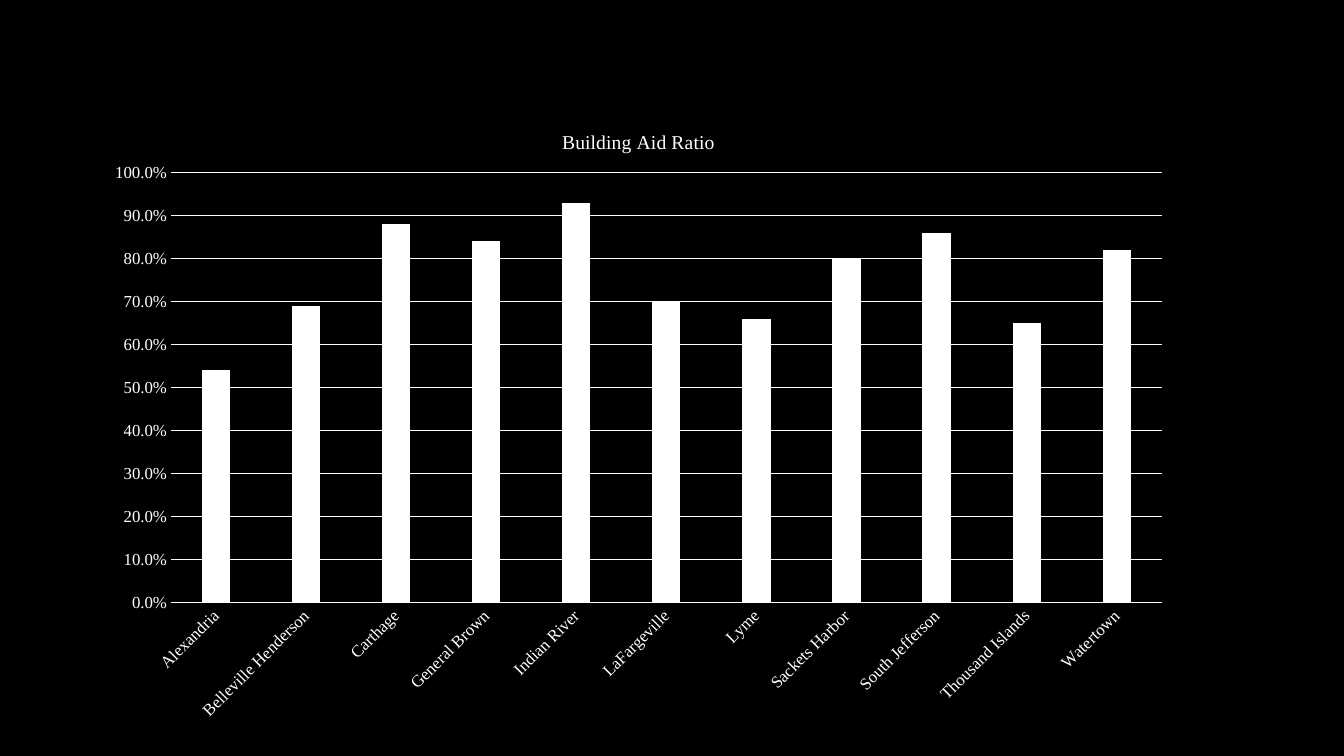
"""Build a slide with a column chart of building aid ratios by school district."""
from lxml.etree import SubElement
from pptx import Presentation
from pptx.chart.data import CategoryChartData
from pptx.dml.color import RGBColor
from pptx.enum.chart import XL_CHART_TYPE as ChartType, XL_TICK_MARK as TickMark
from pptx.oxml.ns import qn
from pptx.util import Cm, Pt

TITLE = "Building Aid Ratio"
AID_RATIOS = {
    "Alexandria": 0.54,
    "Belleville Henderson": 0.69,
    "Carthage": 0.88,
    "General Brown": 0.84,
    "Indian River": 0.93,
    "LaFargeville": 0.7,
    "Lyme": 0.66,
    "Sackets Harbor": 0.8,
    "South Jefferson": 0.86,
    "Thousand Islands": 0.65,
    "Watertown": 0.82,
}
COLORS = {"background": "000000", "ink": "FFFFFF"}
FONT = "Times New Roman"
INK = RGBColor.from_string(COLORS["ink"])
CHART_BOX = {"x": Cm(2.35), "y": Cm(2.72), "w": Cm(27.48), "h": Cm(15.98)}
PLOT_BOX = {"x": Cm(4.31), "y": Cm(4.35), "w": Cm(24.97), "h": Cm(10.84)}


def style_font(font, size):
    font.name = FONT
    font.size = Pt(size)
    font.bold = False
    font.color.rgb = INK


def style_line(line):
    line.color.rgb = INK
    line.width = Pt(0.75)


def place_plot(chart):
    plot_area = chart._chartSpace.find(".//" + qn("c:plotArea"))
    for automatic in plot_area.findall(qn("c:layout")):
        plot_area.remove(automatic)
    layout = SubElement(plot_area, qn("c:layout"))
    plot_area.insert(0, layout)
    manual = SubElement(layout, qn("c:manualLayout"))
    settings = {"layoutTarget": "inner", "xMode": "edge", "yMode": "edge"}
    for side, size in (("x", "w"), ("y", "h")):
        settings[side] = (PLOT_BOX[side] - CHART_BOX[side]) / CHART_BOX[size]
    for size in ("w", "h"):
        settings[size] = PLOT_BOX[size] / CHART_BOX[size]
    for tag, value in settings.items():
        SubElement(manual, qn(f"c:{tag}")).set("val", str(value))


def add_ratio_chart(slide):
    data = CategoryChartData(number_format="0.0%")
    data.categories = list(AID_RATIOS)
    data.add_series("Series 1", list(AID_RATIOS.values()))
    chart = slide.shapes.add_chart(
        ChartType.COLUMN_CLUSTERED, *CHART_BOX.values(), data
    ).chart
    style_font(chart.font, 12)
    chart.has_legend = False

    chart.has_title = True
    title_run = chart.chart_title.text_frame.paragraphs[0].add_run()
    title_run.text = TITLE
    style_font(title_run.font, 14)
    chart.chart_title.include_in_layout = False
    place_plot(chart)

    plot = chart.plots[0]
    plot.gap_width = 219
    plot.overlap = -27
    plot.vary_by_categories = False
    columns = plot.series[0].format
    columns.fill.solid()
    columns.fill.fore_color.rgb = INK
    columns.line.fill.background()

    districts, ratios = chart.category_axis, chart.value_axis
    for axis in (districts, ratios):
        axis.major_tick_mark = axis.minor_tick_mark = TickMark.NONE
        style_font(axis.tick_labels.font, 12)
    style_line(districts.format.line)
    label_body = districts._element.find(f"{qn('c:txPr')}/{qn('a:bodyPr')}")
    label_body.set("rot", str(-45 * 60000))
    label_body.set("vert", "horz")

    ratios.minimum_scale, ratios.maximum_scale, ratios.major_unit = 0, 1, 0.1
    ratios.tick_labels.number_format = "0.0%"
    ratios.tick_labels.number_format_is_linked = False
    ratios.format.line.fill.background()
    ratios.has_major_gridlines = True
    style_line(ratios.major_gridlines.format.line)


def main():
    deck = Presentation()
    deck.slide_width, deck.slide_height = Cm(33.87), Cm(19.05)
    slide = deck.slides.add_slide(deck.slide_layouts[6])
    backdrop = slide.background.fill
    backdrop.solid()
    backdrop.fore_color.rgb = RGBColor.from_string(COLORS["background"])
    add_ratio_chart(slide)
    deck.save("out.pptx")


if __name__ == "__main__":
    main()
